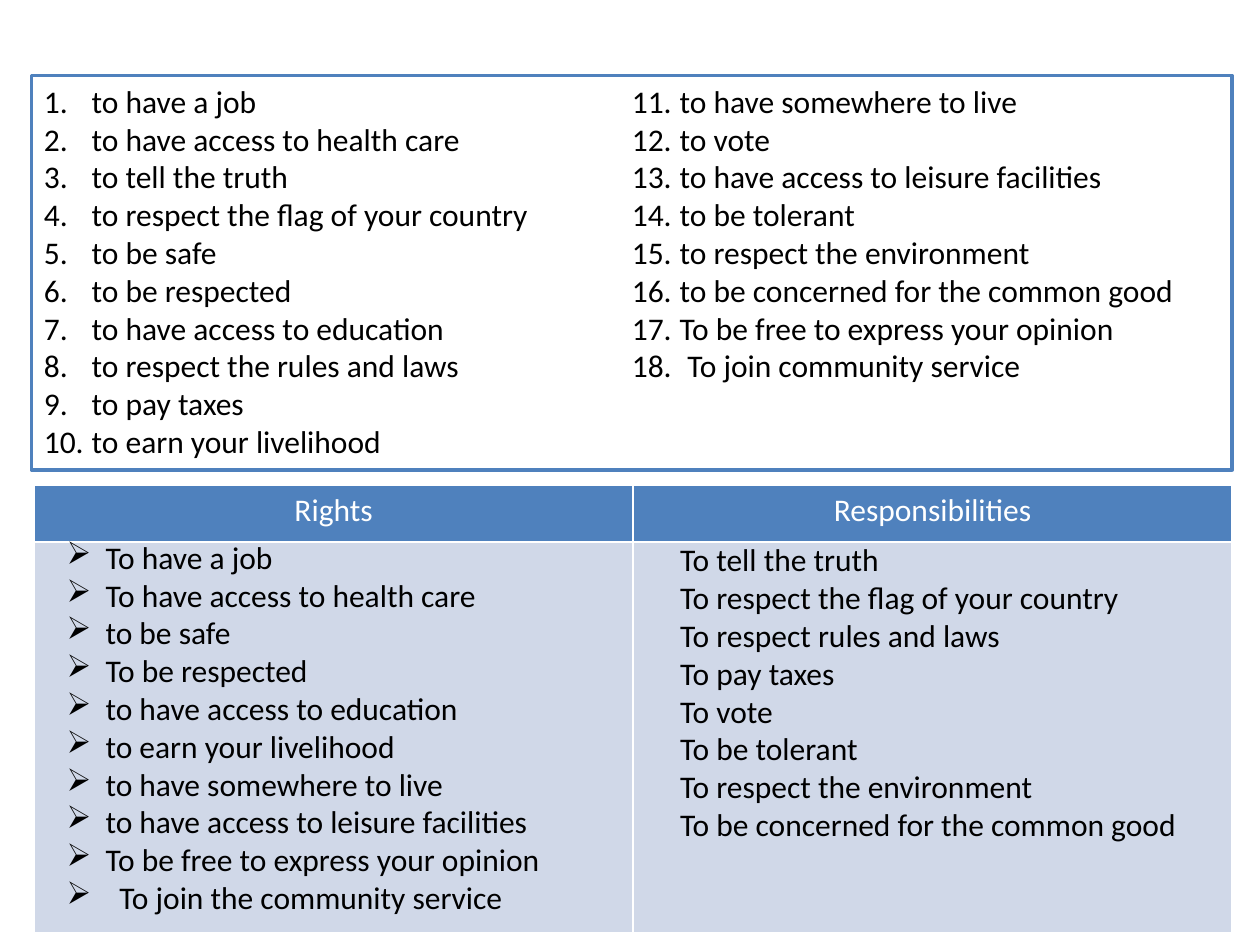
from lxml import etree
from pptx import Presentation
from pptx.dml.color import RGBColor
from pptx.enum.shapes import MSO_SHAPE
from pptx.enum.text import MSO_ANCHOR, MSO_AUTO_SIZE, PP_ALIGN
from pptx.oxml.ns import qn
from pptx.util import Pt

RECT = MSO_SHAPE.RECTANGLE
TOP = MSO_ANCHOR.TOP
GROW = MSO_AUTO_SIZE.SHAPE_TO_FIT_TEXT
LEFT, CENTER = PP_ALIGN.LEFT, PP_ALIGN.CENTER

PX = 9144  # 100 px to the inch
BLUE, PALE, WHITE, BLACK = "4F81BD", "D0D8E8", "FFFFFF", "000000"
NUMBER = ("a:buAutoNum", {"type": "arabicPeriod"})
ARROW = ("a:buChar", {"char": "➢"})

STATEMENTS = [
    "to have a job", "to have access to health care", "to tell the truth",
    "to respect the flag of your country", "to be safe", "to be respected",
    "to have access to education", "to respect the rules and laws",
    "to pay taxes", "to earn your livelihood", "to have somewhere to live",
    "to vote", "to have access to leisure facilities", "to be tolerant",
    "to respect the environment", "to be concerned for the common good",
    "To be free to express your opinion", "To join community service",
]
RIGHTS = [
    "To have a job", "To have access to health care", "to be safe",
    "To be respected", "to have access to education",
    "to earn your livelihood", "to have somewhere to live",
    "to have access to leisure facilities",
    "To be free to express your opinion", "To join the community service",
]
RESPONSIBILITIES = [
    "To tell the truth", "To respect the flag of your country",
    "To respect rules and laws", "To pay taxes", "To vote", "To be tolerant",
    "To respect the environment", "To be concerned for the common good",
]


def px(n):
    return round(n * PX)


def rgb(value):
    return RGBColor.from_string(value)


def add_run(p, text, color=BLACK):
    r = p.add_run()
    r.text = text
    r.font.name, r.font.size, r.font.bold = "Calibri", Pt(18), False
    r.font.color.rgb = rgb(color)


def set_bullet(p, bullet, hang):
    tag, attrs = bullet
    pPr = p._p.get_or_add_pPr()
    pPr.set("marL", str(px(hang)))
    pPr.set("indent", str(px(-hang)))
    etree.SubElement(pPr, qn(tag), attrs)


def fill_list(tf, items, bullet=None, hang=0, last_extra=0):
    """Write one paragraph per item; the last one hangs last_extra px deeper."""
    tf.word_wrap, tf.auto_size, tf.vertical_anchor = True, GROW, TOP
    for i, item in enumerate(items):
        p = tf.paragraphs[0] if i == 0 else tf.add_paragraph()
        p.alignment = LEFT
        if bullet:
            extra = last_extra if i == len(items) - 1 else 0
            set_bullet(p, bullet, hang + extra)
        add_run(p, item)


def add_statement_box(slide, x, y, w, h):
    sp = slide.shapes.add_shape(RECT, px(x), px(y), px(w), px(h))
    sp.shadow.inherit = False
    sp.fill.solid()
    sp.fill.fore_color.rgb = rgb(WHITE)
    sp.line.color.rgb = rgb(BLUE)
    sp.line.width = Pt(2)
    fill_list(sp.text_frame, STATEMENTS, NUMBER, hang=38, last_extra=6)
    sp.element.txBody.bodyPr.set("numCol", "2")


def style_cell(cell, color):
    tcPr = cell._tc.get_or_add_tcPr()
    for side in ("L", "R", "T", "B"):
        ln = etree.SubElement(tcPr, qn(f"a:ln{side}"), w=str(Pt(1)))
        fill = etree.SubElement(ln, qn("a:solidFill"))
        etree.SubElement(fill, qn("a:srgbClr"), val=WHITE)
    cell.fill.solid()
    cell.fill.fore_color.rgb = rgb(color)


def add_list_box(slide, x, y, w, h, items, **bullets):
    sp = slide.shapes.add_textbox(px(x), px(y), px(w), px(h))
    fill_list(sp.text_frame, items, **bullets)


def add_sorting_table(slide, x, y, w, h):
    """Two headed columns, with a list laid over each body cell."""
    head_h = 45
    table = slide.shapes.add_table(2, 2, px(x), px(y), px(w), px(h)).table
    table.rows[0].height = px(head_h)
    table.rows[1].height = px(h - head_h)
    for col, title in enumerate(("Rights", "Responsibilities")):
        table.columns[col].width = px(w / 2)
        head = table.cell(0, col)
        style_cell(head, BLUE)
        style_cell(table.cell(1, col), PALE)
        p = head.text_frame.paragraphs[0]
        p.alignment = CENTER
        add_run(p, title, WHITE)
    add_list_box(slide, x + 16, y + 37, 433, 313, RIGHTS,
                 bullet=ARROW, hang=31, last_extra=11)
    add_list_box(slide, x + 503, y + 39, 433, 283, RESPONSIBILITIES)


def main():
    prs = Presentation()
    prs.slide_width, prs.slide_height = px(1000), px(750)
    slide = prs.slides.add_slide(prs.slide_layouts[6])
    add_statement_box(slide, 25, 60, 953, 313)
    add_sorting_table(slide, 27, 385, 951, 355)
    prs.save("out.pptx")


if __name__ == "__main__":
    main()
